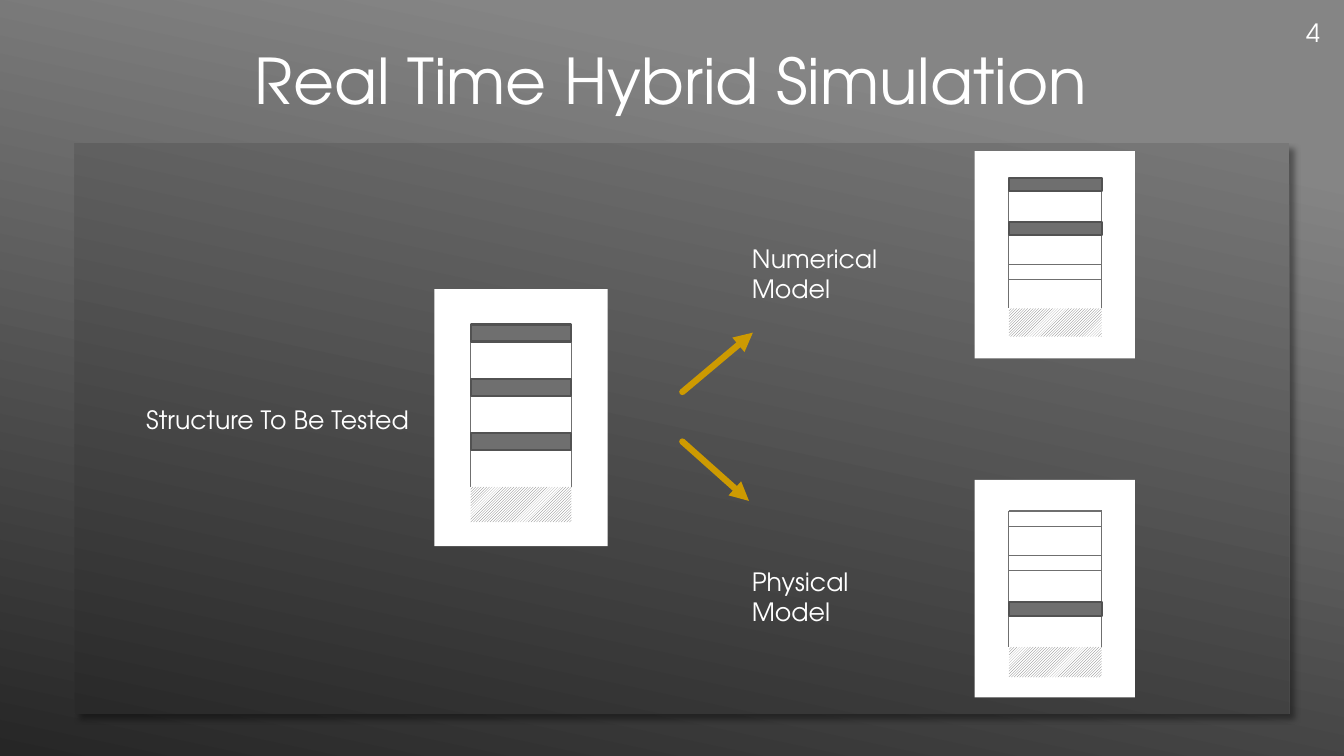
import pptx
import pptx.util
import pptx.dml.color
import pptx.enum.dml
import pptx.enum.shapes
import pptx.enum.text
import pptx.oxml
import pptx.oxml.ns
from dataclasses import dataclass

Pt = pptx.util.Pt
qn = pptx.oxml.ns.qn
ALIGN = pptx.enum.text.PP_ALIGN
ANCHOR = pptx.enum.text.MSO_ANCHOR


@dataclass(frozen=True)
class Theme:
    font: str = "TeX Gyre Adventor"
    title_size: float = 45
    label_size: float = 18
    text: str = "FFFFFF"
    card: str = "FFFFFF"
    slab: str = "6F6F6F"
    slab_edge: str = "525252"
    arrow: str = "CD9A01"
    background: tuple = ((0.17, "858585"), (1, "262626"))
    panel: tuple = ((0, "787878"), (1, "292929"))
    gradient_angle: float = 258


def rgb(value):
    return pptx.dml.color.RGBColor.from_string(value)


def element(tag, **attrs):
    el = pptx.oxml.parse_xml(f"<a:{tag} {pptx.oxml.ns.nsdecls('a')}/>")
    for name, value in attrs.items():
        el.set(name, str(value))
    return el


def write(tf, text, *, font, size, color, align=ALIGN.LEFT,
          anchor=ANCHOR.TOP, wrap=True):
    tf.word_wrap = wrap
    tf.vertical_anchor = anchor
    tf.auto_size = pptx.enum.text.MSO_AUTO_SIZE.NONE
    p = tf.paragraphs[0]
    p.alignment = align
    r = p.add_run()
    r.text = text
    r.font.name = font
    r.font.size = Pt(size)
    r.font.color.rgb = rgb(color)


class Deck:
    """Holds the theme and the current slide."""

    def __init__(self, prs, theme):
        self.theme = theme
        self.s = prs.slides.add_slide(prs.slide_layouts[5])
        self.gradient(self.s.background.fill, theme.background)

    def gradient(self, fill, stops):
        fill.gradient()
        fill.gradient_angle = self.theme.gradient_angle
        for stop, (position, color) in zip(fill.gradient_stops, stops):
            stop.position = position
            stop.color.rgb = rgb(color)

    def title(self, text, x, y, w, h):
        sp = self.s.shapes.title
        sp.left, sp.top, sp.width, sp.height = map(Pt, (x, y, w, h))
        t = self.theme
        write(sp.text_frame, text, font=t.font, size=t.title_size,
              color=t.text, align=ALIGN.CENTER, anchor=ANCHOR.MIDDLE)

    def label(self, text, x, y, w, h, wrap=False):
        sp = self.s.shapes.add_textbox(Pt(x), Pt(y), Pt(w), Pt(h))
        t = self.theme
        write(sp.text_frame, text, font=t.font, size=t.label_size,
              color=t.text, wrap=wrap)

    def rect(self, x, y, w, h, fill=None, edge=None):
        sp = self.s.shapes.add_shape(
            pptx.enum.shapes.MSO_SHAPE.RECTANGLE, Pt(x), Pt(y), Pt(w), Pt(h))
        sp.shadow.inherit = False
        if fill:
            sp.fill.solid()
            sp.fill.fore_color.rgb = rgb(fill)
        if edge:
            sp.line.color.rgb = rgb(edge)
            sp.line.width = Pt(1.5)
        else:
            sp.line.fill.background()
        return sp

    def panel(self, x, y, w, h):
        sp = self.rect(x, y, w, h)
        self.gradient(sp.fill, self.theme.panel)
        shadow = element("outerShdw", blurRad=Pt(4), dist=Pt(6),
                         dir=45 * 60000, algn="tl", rotWithShape=0)
        color = element("srgbClr", val="000000")
        color.append(element("alpha", val=40000))
        shadow.append(color)
        sp.element.spPr.find(qn("a:effectLst")).append(shadow)

    def hatch(self, x, y, w, h):
        fill = self.rect(x, y, w, h).fill
        fill.patterned()
        fill.pattern = pptx.enum.dml.MSO_PATTERN.DARK_UPWARD_DIAGONAL
        fill.fore_color.rgb = rgb(self.theme.slab)
        fill.back_color.rgb = rgb(self.theme.card)

    def line(self, x1, y1, x2, y2, color, width):
        c = self.s.shapes.add_connector(
            pptx.enum.shapes.MSO_CONNECTOR.STRAIGHT,
            Pt(x1), Pt(y1), Pt(x2), Pt(y2))
        c.line.color.rgb = rgb(color)
        c.line.width = Pt(width)
        c.element.spPr.append(element("effectLst"))
        return c

    def arrow(self, x1, y1, x2, y2):
        c = self.line(x1, y1, x2, y2, self.theme.arrow, 4.5)
        ln = c.element.spPr.find(qn("a:ln"))
        ln.set("cap", "rnd")
        ln.append(element("round"))
        ln.append(element("tailEnd", type="triangle"))

    def building(self, card, left, width, floors, slab_h, ground, ground_h):
        """floors lists (top, solid); a floor that is not solid is two lines."""
        t = self.theme
        right = left + width
        self.rect(*card, fill=t.card)
        for x in (left, right):
            self.line(x, floors[0][0], x, ground, t.slab, 0.75)
        for top, solid in floors:
            if solid:
                self.rect(left, top, width, slab_h, t.slab, t.slab_edge)
            else:
                for y in (top, top + 10.8):
                    self.line(left, y, right, y, t.slab, 0.75)
        self.hatch(left, ground, width, ground_h)


def main():
    prs = pptx.Presentation()
    prs.slide_width, prs.slide_height = Pt(960), Pt(540)
    deck = Deck(prs, Theme())

    # Backdrop and title
    deck.panel(53.3, 102.2, 867.6, 407.5)
    deck.title("Real Time Hybrid Simulation", 13.7, 25.9, 931, 62)

    # Numerical part: the two upper floors
    deck.arrow(487.4, 280, 537.8, 237.6)
    deck.building((696.2, 108, 114.5, 148), 720.7, 66.2,
                  [(127, True), (158.4, True), (188.8, False)],
                  9.4, 220.3, 20.2)
    deck.label("Numerical Model", 529.9, 170, 115, 50, wrap=True)

    # Physical part: the lowest floor
    deck.arrow(487.4, 315.4, 535, 357.8)
    deck.building((696.2, 342.7, 114.5, 155.5), 720.7, 66.2,
                  [(365, False), (396.6, False), (429.8, True)],
                  10.1, 462.2, 21.6)
    deck.label("Physical Model", 529.9, 401, 115, 50, wrap=True)

    # Whole structure
    deck.building((310.3, 206.6, 123.8, 183.6), 336.2, 72,
                  [(231.8 + 38.9 * i, True) for i in range(3)],
                  12.2, 347.8, 25.2)
    deck.label("Structure To Be Tested", 97.2, 285.1, 205.2, 28.8)

    # Slide number
    deck.label("4", 925.9, 8.6, 24.5, 28.8)

    prs.save("out.pptx")


if __name__ == "__main__":
    main()
